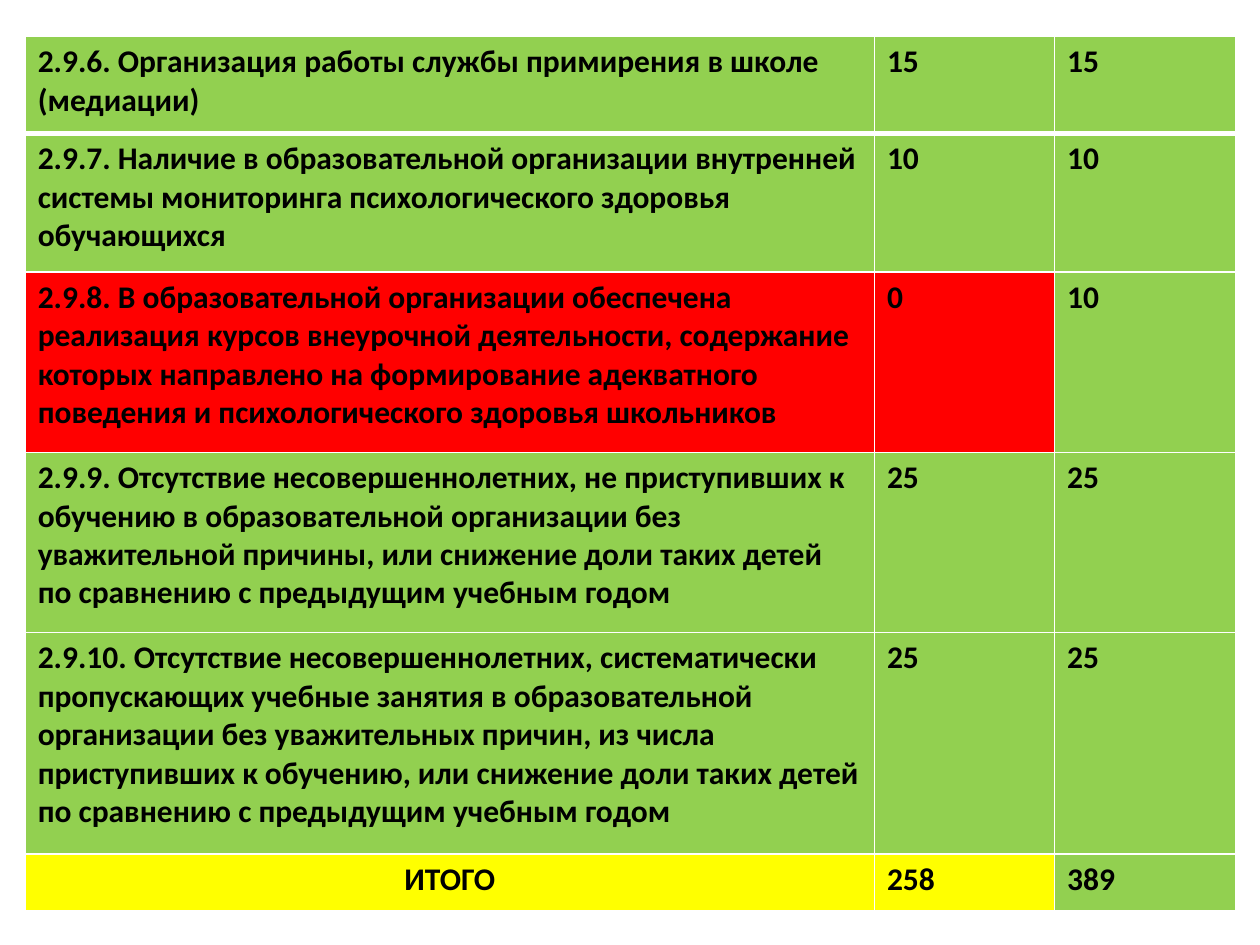
from lxml import etree
from pptx import Presentation
from pptx import util as u
from pptx.dml.color import RGBColor
from pptx.enum import text
from pptx.oxml import ns

GREEN = RGBColor(0x92, 0xD0, 0x50)
RED = RGBColor(0xFF, 0x00, 0x00)
YELLOW = RGBColor(0xFF, 0xFF, 0x00)
BLACK = RGBColor(0x00, 0x00, 0x00)
WHITE = RGBColor(0xFF, 0xFF, 0xFF)

COLS = [6.74, 1.43, 1.44]
# Row height, colour of the first two cells, texts
ROWS = [
    (0.77, GREEN, ("2.9.6. Организация работы службы примирения в школе "
                   "(медиации)", "15", "15")),
    (1.1, GREEN, ("2.9.7. Наличие в образовательной организации внутренней "
                  "системы мониторинга психологического здоровья "
                  "обучающихся", "10", "10")),
    (1.43, RED, ("2.9.8. В образовательной организации обеспечена "
                 "реализация курсов внеурочной деятельности, содержание "
                 "которых направлено на формирование адекватного "
                 "поведения и психологического здоровья школьников",
                 "0", "10")),
    (1.43, GREEN, ("2.9.9. Отсутствие несовершеннолетних, не приступивших к "
                   "обучению в образовательной организации без "
                   "уважительной причины, или снижение доли таких детей "
                   "по сравнению с предыдущим учебным годом", "25", "25")),
    (1.76, GREEN, ("2.9.10. Отсутствие несовершеннолетних, систематически "
                   "пропускающих учебные занятия в образовательной "
                   "организации без уважительных причин, из числа "
                   "приступивших к обучению, или снижение доли таких детей "
                   "по сравнению с предыдущим учебным годом", "25", "25")),
    (0.45, YELLOW, ("ИТОГО", "258", "389")),
]


class Deck:
    font = "Calibri"
    size = u.Pt(18)

    def __init__(self, slide):
        self.slide = slide

    def table(self, left, top, cols, rows):
        high = sum(row[0] for row in rows)
        grid = self.slide.shapes.add_table(
            len(rows), len(cols), u.Inches(left), u.Inches(top),
            u.Inches(sum(cols)), u.Inches(high)).table
        for col, width in zip(grid.columns, cols):
            col.width = u.Inches(width)
        for r, (height, fill, words) in enumerate(rows):
            grid.rows[r].height = u.Inches(height)
            for c, word in enumerate(words):
                cell = grid.cell(r, c)
                self.edge(cell, top=3 if r == 1 else 1,
                          base=3 if r == 0 else 1)
                self.fill(cell, word, GREEN if c == 2 else fill)
        return grid

    def fill(self, cell, word, color):
        cell.fill.solid()
        cell.fill.fore_color.rgb = color
        cell.text = word
        font = cell.text_frame.paragraphs[0].font
        font.name, font.size, font.bold = self.font, self.size, True
        font.color.rgb = BLACK

    def edge(self, cell, top, base):
        """Draw white cell borders; call before the fill is set."""
        props = cell._tc.get_or_add_tcPr()
        for side, width in zip("LRTB", (1, 1, top, base)):
            line = etree.SubElement(props, ns.qn(f"a:ln{side}"),
                                    w=str(u.Pt(width)))
            solid = etree.SubElement(line, ns.qn("a:solidFill"))
            etree.SubElement(solid, ns.qn("a:srgbClr"), val=str(WHITE))


def main():
    prs = Presentation()
    prs.slide_width, prs.slide_height = u.Inches(10), u.Inches(7.5)
    deck = Deck(prs.slides.add_slide(prs.slide_layouts[6]))
    grid = deck.table(0.2, 0.29, COLS, ROWS)
    total = grid.cell(len(ROWS) - 1, 0).text_frame.paragraphs[0]
    total.alignment = text.PP_ALIGN.CENTER
    prs.save("out.pptx")


if __name__ == "__main__":
    main()
